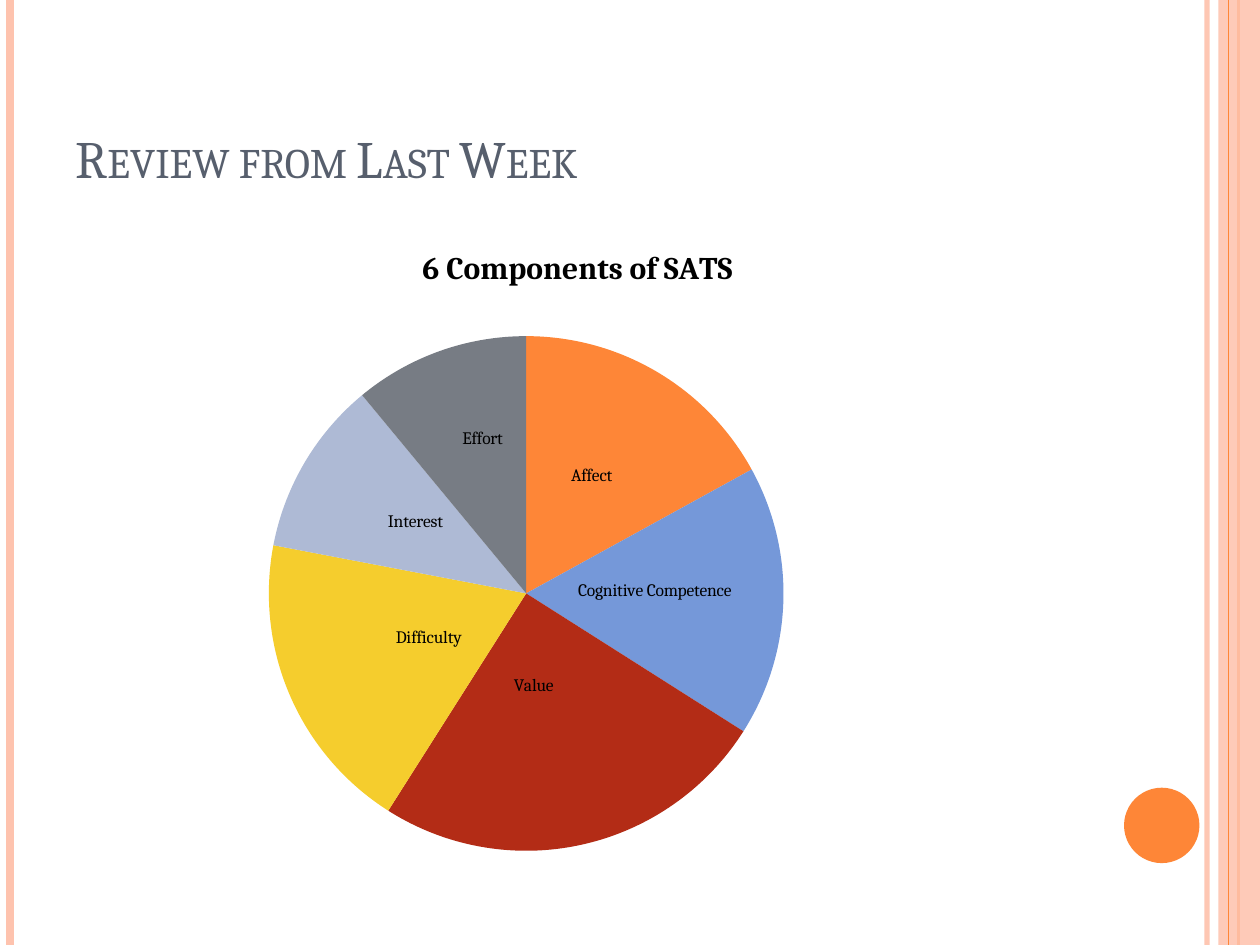
import pptx
import pptx.chart.data
import pptx.dml.color
import pptx.enum.chart
import pptx.enum.shapes
import pptx.enum.text
import pptx.oxml
import pptx.oxml.ns
import pptx.util
from pptx.util import Cm

FONT = "Cambria"
WIDE, HIGH = 25.4, 19.05
qn = pptx.oxml.ns.qn

# name, value, colour, label shift as a share of the chart (x, y)
PARTS = [
    ("Affect", 17, "FE8637", 0, -0.01),
    ("Cog Comp", 17, "7598D9", 0, -0.01),
    ("Value", 25, "B32C16", -0.02, -0.05),
    ("Difficulty", 19, "F5CD2D", 0.02, -0.01),
    ("Interest", 11, "AEBAD5", 0, -0.01),
    ("Effort", 11, "777C84", 0, -0.05),
]
LONG = {"Cog Comp": "Cognitive Competence"}


def rgb(code):
    return pptx.dml.color.RGBColor.from_string(code)


def style(font, size, code="000000", bold=False):
    font.name, font.size, font.bold = FONT, pptx.util.Pt(size), bold
    font.color.rgb = rgb(code)


def fade(item, share):
    """Set the opacity, in percent, of the first colour in a shape."""
    tint = item._element.spPr.find(".//" + qn("a:srgbClr"))
    alpha = tint.makeelement(qn("a:alpha"), {"val": str(share * 1000)})
    tint.append(alpha)


def rule(slide, x, code, width, share=100):
    line = slide.shapes.add_connector(
        pptx.enum.shapes.MSO_CONNECTOR.STRAIGHT, Cm(x), 0, Cm(x), Cm(HIGH))
    line.line.color.rgb = rgb(code)
    line.line.width = pptx.util.Pt(width)
    props = line._element.spPr
    props.append(props.makeelement(qn("a:effectLst"), {}))
    if share < 100:
        fade(line, share)


def solid(slide, kind, box, code, share=100):
    item = slide.shapes.add_shape(kind, *map(Cm, box))
    item.shadow.inherit = False
    item.fill.solid()
    item.fill.fore_color.rgb = rgb(code)
    item.line.fill.background()
    if share < 100:
        fade(item, share)


def frame(slide, left, right):
    """Draw the left rule, and the right band with its rules and disc."""
    shape = pptx.enum.shapes.MSO_SHAPE
    rule(slide, right - 1.07, "FEC3AE", 3, 93)
    rule(slide, left + 0.2, "FEC3AE", 4.5)
    rule(slide, right - 0.43, "FE8637", 1.5)
    solid(slide, shape.RECTANGLE, (right - 0.84, 0, 0.84, HIGH), "FEC3AE", 87)
    rule(slide, right - 0.64, "FE8637", 0.75)
    solid(slide, shape.OVAL, (right - 2.74, 15.88, 1.52, 1.52), "FE8637")


def head(slide, box, text):
    area = slide.shapes.add_textbox(*map(Cm, box)).text_frame
    area.word_wrap = True
    area.vertical_anchor = pptx.enum.text.MSO_ANCHOR.BOTTOM
    run = area.paragraphs[0].add_run()
    run.text = text
    style(run.font, 30, "575F6D")
    run.font._element.set("cap", "small")


def layout(x, y, size=None):
    """Make a manual layout: a plot area with a size, else a label shift."""
    rows = [("x", x), ("y", y)]
    if size:
        rows = [("layoutTarget", "inner"), ("xMode", "edge"),
                ("yMode", "edge"), *rows, ("w", size[0]), ("h", size[1])]
    body = "".join(f'<c:{tag} val="{val}"/>' for tag, val in rows)
    return pptx.oxml.parse_xml(
        f'<c:layout {pptx.oxml.ns.nsdecls("c")}>'
        f"<c:manualLayout>{body}</c:manualLayout></c:layout>")


def pie(slide, box, text):
    kinds = pptx.enum.chart
    data = pptx.chart.data.CategoryChartData()
    data.categories = [part[0] for part in PARTS]
    data.add_series("Series 1", [part[1] for part in PARTS])
    chart = slide.shapes.add_chart(
        kinds.XL_CHART_TYPE.PIE, *map(Cm, box), data).chart
    style(chart.font, 10)
    chart.has_legend = False

    # Title
    chart.has_title = True
    run = chart.chart_title.text_frame.paragraphs[0].add_run()
    run.text = text
    style(run.font, 18, bold=True)

    # Plot area
    area = chart.element.find(".//" + qn("c:plotArea"))
    for old in area.findall(qn("c:layout")):
        area.remove(old)
    area.insert(0, layout(0.2, 0.17, (0.5, 0.77)))

    # Labels for the whole pie
    plot = chart.plots[0]
    plot.vary_by_categories = True
    plot.has_data_labels = True
    plot.data_labels.show_category_name = True
    plot.data_labels.show_value = False
    plot.data_labels.show_percentage = False

    # Slices, each with its own label
    for i, (name, _, code, x, y) in enumerate(PARTS):
        point = plot.series[0].points[i]
        point.format.fill.solid()
        point.format.fill.fore_color.rgb = rgb(code)
        point.format.line.fill.background()
        label = point.data_label
        if name in LONG:
            run = label.text_frame.paragraphs[0].add_run()
            run.text = LONG[name]
            style(run.font, 10)
        label.position = kinds.XL_LABEL_POSITION.CENTER
    for node, part in zip(area.iter(qn("c:dLbl")), PARTS):
        node.find(qn("c:showCatName")).set("val", "1")
        node.find(qn("c:showVal")).set("val", "0")
        for old in node.findall(qn("c:layout")):
            node.remove(old)
        node.insert(1, layout(*part[3:]))


def main():
    deck = pptx.Presentation()
    deck.slide_width, deck.slide_height = Cm(WIDE), Cm(HIGH)
    slide = deck.slides.add_slide(deck.slide_layouts[6])
    frame(slide, 0, WIDE)
    head(slide, (1.27, 0.76, 20.75, 3.18), "Review from Last Week")
    pie(slide, (1.27, 4.45, 20.75, 13.54), "6 Components of SATS")
    deck.save("out.pptx")


if __name__ == "__main__":
    main()
